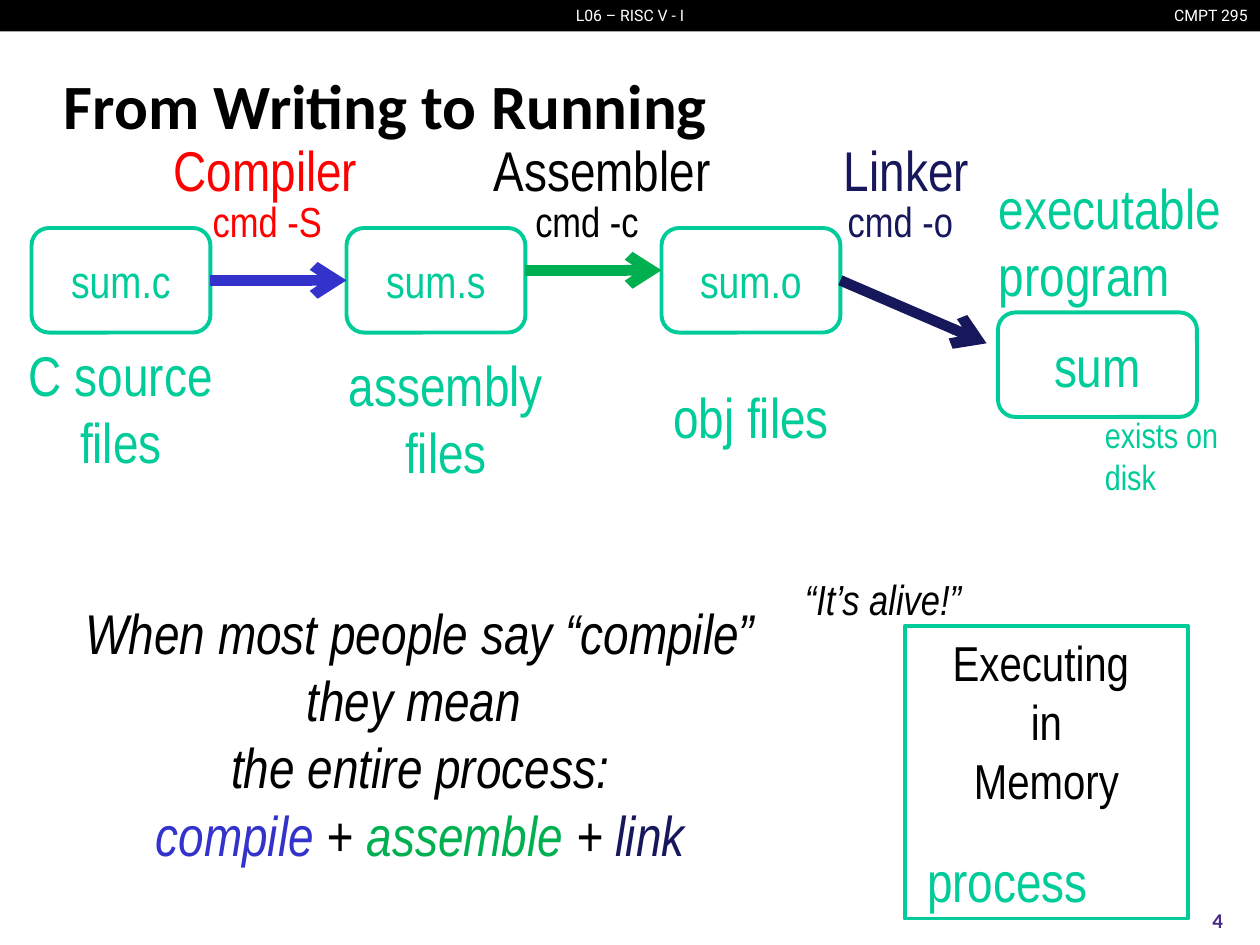
from dataclasses import dataclass

from lxml import etree
from pptx import Presentation
from pptx.dml.color import RGBColor
from pptx.enum.shapes import MSO_CONNECTOR, MSO_SHAPE
from pptx.enum.text import MSO_ANCHOR, PP_ALIGN
from pptx.oxml.ns import qn
from pptx.util import Inches, Pt

LEFT, CENTER, RIGHT = PP_ALIGN.LEFT, PP_ALIGN.CENTER, PP_ALIGN.RIGHT
TOP, MIDDLE = MSO_ANCHOR.TOP, MSO_ANCHOR.MIDDLE
RECTANGLE, ROUNDED = MSO_SHAPE.RECTANGLE, MSO_SHAPE.ROUNDED_RECTANGLE
STRAIGHT = MSO_CONNECTOR.STRAIGHT


@dataclass(frozen=True)
class Theme:
    """Colours, fonts and sizes of the slide."""
    black: str = "000000"
    white: str = "FFFFFF"
    file: str = "00CC99"
    compiler: str = "FF0000"
    compile: str = "3333CC"
    assemble: str = "00B050"
    link: str = "17175C"
    number: str = "4B2A85"
    body_font: str = "Arial Narrow"
    title_font: str = "Calibri"
    header_font: str = "Roboto"
    title: int = 36
    large: int = 32
    memory: int = 28
    file_name: int = 26
    command: int = 24
    note: int = 20
    number_size: int = 12
    header: int = 9
    outline: float = 2.25
    arrow: int = 6


THEME = Theme()


def write(shape, lines, size, color=THEME.black, align=LEFT, anchor=TOP,
          font=THEME.body_font, bold=False, italic=False):
    """Write lines, each a string or a list of (text, colour) runs, into a shape."""
    frame = shape.text_frame
    frame.word_wrap = True
    frame.vertical_anchor = anchor
    for index, line in enumerate(lines):
        paragraph = frame.add_paragraph() if index else frame.paragraphs[0]
        paragraph.alignment = align
        runs = [(line, color)] if isinstance(line, str) else line
        for text, run_color in runs:
            run = paragraph.add_run()
            run.text = text
            run.font.name = font
            run.font.size = Pt(size)
            run.font.bold = bold
            run.font.italic = italic
            run.font.color.rgb = RGBColor.from_string(run_color)


def add_text(slide, box, lines, size, *args, **style):
    """Place a text box in a box of inches."""
    write(slide.shapes.add_textbox(*map(Inches, box)), lines, size, *args, **style)


def add_outline(slide, kind, box):
    """Place an unfilled shape with the file-coloured outline."""
    shape = slide.shapes.add_shape(kind, *map(Inches, box))
    shape.shadow.inherit = False
    shape.fill.background()
    shape.line.color.rgb = RGBColor.from_string(THEME.file)
    shape.line.width = Pt(THEME.outline)
    return shape


def add_file(slide, box, name, size):
    """Place a rounded box that holds a file name."""
    shape = add_outline(slide, ROUNDED, box)
    frame = shape.text_frame
    frame.margin_left = frame.margin_right = frame.margin_top = frame.margin_bottom = 0
    write(shape, [name], size, THEME.file, CENTER, MIDDLE)


def add_arrow(slide, start, end, color):
    """Draw a thick arrow between two points."""
    connector = slide.shapes.add_connector(STRAIGHT, *map(Inches, (*start, *end)))
    connector.line.color.rgb = RGBColor.from_string(color)
    connector.line.width = Pt(THEME.arrow)
    line = connector.line._get_or_add_ln()
    etree.SubElement(line, qn("a:tailEnd"), type="arrow")
    etree.SubElement(connector._element.spPr, qn("a:effectLst"))


def add_header(slide, box):
    """Place the black strip with the lecture and course names."""
    left, top, width, height = box
    strip = slide.shapes.add_shape(RECTANGLE, *map(Inches, box))
    strip.shadow.inherit = False
    strip.fill.solid()
    strip.fill.fore_color.rgb = RGBColor.from_string(THEME.black)
    strip.line.fill.background()
    style = {"color": THEME.white, "font": THEME.header_font}
    add_text(slide, box, ["L06 – RISC V - I"], THEME.header, align=CENTER, **style)
    add_text(slide, (left + width - 2, top, 2, height), ["CMPT 295"],
             THEME.header, align=RIGHT, **style)


def add_pipeline(slide, box):
    """Place the three source stages at an equal pitch, with tools and captions."""
    left, top, width, height = box
    pitch, file_width, file_height = 2.5, 1.42, 0.83
    file_top = top + 0.78
    middle = file_top + file_height / 2
    files = [
        ("sum.c", ["C source", "files"], -0.29, 1.62, 2),
        ("sum.s", ["assembly", "files"], -0.26, 1.7, 2.1),
        ("sum.o", ["obj files"], -0.15, 1.96, 1.72),
    ]
    for index, (name, caption, shift, drop, caption_width) in enumerate(files):
        x = left + index * pitch
        add_file(slide, (x, file_top, file_width, file_height), name, THEME.file_name)
        add_text(slide, (x + shift, top + drop, caption_width, 0.6 * len(caption)),
                 caption, THEME.large, THEME.file, CENTER)
    tools = [
        ("Compiler", 1.28, "cmd -S", 1.59, THEME.compiler),
        ("Assembler", 3.82, "cmd -c", 4.15, THEME.black),
        ("Linker", 6.6, "cmd -o", 6.63, THEME.link),
    ]
    for tool, tool_left, command, command_left, color in tools:
        add_text(slide, (tool_left, top, 2.3, 0.64), [tool], THEME.large, color)
        add_text(slide, (command_left, top + 0.47, 1.2, 0.5), [command],
                 THEME.command, color)
    arrows = [
        (middle, pitch, middle, THEME.compile),
        (middle - 0.08, pitch, middle - 0.08, THEME.assemble),
        (middle, pitch + 0.08, middle + 0.5, THEME.link),
    ]
    for index, (start_y, reach, end_y, color) in enumerate(arrows):
        x = left + index * pitch
        add_arrow(slide, (x + file_width, start_y), (x + reach, end_y), color)


def add_program(slide, box):
    """Place the executable file with its caption and note."""
    left, top, width, height = box
    add_text(slide, (left - 0.09, top, 2.37, 1.18), ["executable", "program"],
             THEME.large, THEME.file)
    add_file(slide, (left, top + 1.15, width, 0.83), "sum", THEME.large)
    add_text(slide, (left + 0.75, top + 1.9, 1.39, 0.77), ["exists on", "disk"],
             THEME.note, THEME.file)


def add_process(slide, box):
    """Place the running process in memory with its quote."""
    left, top, width, height = box
    memory = add_outline(slide, RECTANGLE, box)
    write(memory, ["Executing ", "in", "Memory"], THEME.memory, align=CENTER)
    add_text(slide, (left + 0.08, top + 1.7, 1.6, 0.64), ["process"],
             THEME.large, THEME.file)
    add_text(slide, (left - 0.89, top - 0.47, 1.75, 0.5), ["“It’s alive!”"],
             THEME.command, italic=True)


def add_summary(slide, box):
    """Place the statement on what compiling means."""
    steps = [("compile ", THEME.compile), ("+ ", THEME.black),
             ("assemble ", THEME.assemble), ("+ ", THEME.black), ("link", THEME.link)]
    add_text(slide, box, ["When most people say “compile” they mean ",
                          "the entire process:", steps],
             THEME.large, align=CENTER, italic=True)


def main():
    """Build the slide and save it."""
    presentation = Presentation()
    presentation.slide_width, presentation.slide_height = Inches(10), Inches(7.5)
    slide = presentation.slides.add_slide(presentation.slide_layouts[6])
    add_header(slide, (0, 0, 10, 0.25))
    add_text(slide, (0.41, 0.41, 9.17, 0.83), ["From Writing to Running"], THEME.title,
             anchor=MIDDLE, font=THEME.title_font, bold=True)
    add_pipeline(slide, (0.25, 1.03, 7.58, 2.88))
    add_program(slide, (7.92, 1.33, 1.58, 2.67))
    add_summary(slide, (0.53, 4.7, 5.61, 2.26))
    add_process(slide, (7.18, 4.97, 2.25, 2.32))
    add_text(slide, (9.33, 7.1, 0.67, 0.4), ["4"], THEME.number_size, THEME.number,
             CENTER, MIDDLE, font=THEME.title_font, bold=True)
    presentation.save("out.pptx")


if __name__ == "__main__":
    main()
